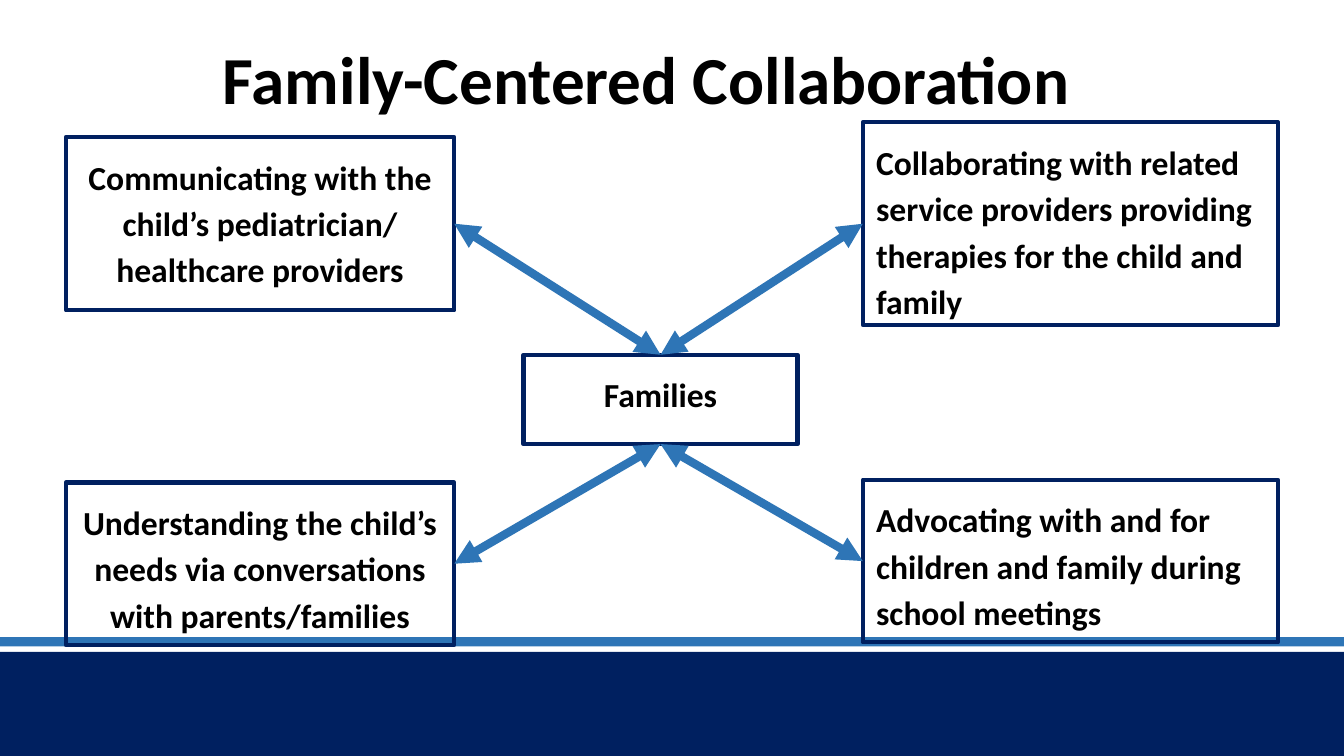
from dataclasses import dataclass

from lxml.etree import SubElement
from pptx import Presentation
from pptx.dml.color import RGBColor
from pptx.enum.shapes import MSO_CONNECTOR as Connector, MSO_SHAPE as Shape
from pptx.enum.text import MSO_ANCHOR as Anchor, PP_ALIGN as Align
from pptx.oxml.ns import qn
from pptx.util import Inches, Pt

NAVY = RGBColor(0x00, 0x20, 0x60)
BLUE = RGBColor(0x2E, 0x75, 0xB6)
BLACK = RGBColor(0, 0, 0)

WIDTH, HEIGHT = Inches(10), Inches(5.625)
FONT = "Calibri"
INSET = Inches(0.1)
TOP, LEFT, BOTTOM, RIGHT = range(4)  # connection sites of a rectangle


@dataclass(frozen=True)
class Area:
    """A rectangle in percent of the slide's width and height."""
    left: float
    top: float
    width: float
    height: float

    def lengths(self) -> tuple[int, int, int, int]:
        return (round(WIDTH * self.left / 100), round(HEIGHT * self.top / 100),
                round(WIDTH * self.width / 100), round(HEIGHT * self.height / 100))


@dataclass(frozen=True)
class Topic:
    """A box around the centre, with the sites its arrow joins."""
    area: Area
    lines: tuple[str, ...]
    align: Align
    center_site: int
    own_site: int


TITLE_AREA = Area(15.6, 1.6, 86.2, 19.4)
CENTER_AREA = Area(38.95, 46.93, 20.4, 11.82)
BANDS = ((Area(0, 86.22, 100, 13.78), NAVY), (Area(0, 84.27, 100, 1.24), BLUE))

LEFT_COLUMN = (4.9, 28.9)
RIGHT_COLUMN = (64.2, 30.9)


def topic_area(column: tuple[float, float], top: float, height: float) -> Area:
    left, width = column
    return Area(left, top, width, height)


TOPICS = (
    Topic(topic_area(LEFT_COLUMN, 18.13, 22.93),
          ("Communicating with the child’s pediatrician/", "healthcare providers"),
          Align.CENTER, TOP, RIGHT),
    Topic(topic_area(RIGHT_COLUMN, 16.18, 26.84),
          ("Collaborating with related service providers providing "
           "therapies for the child and family",),
          Align.LEFT, TOP, LEFT),
    Topic(topic_area(LEFT_COLUMN, 63.82, 21.51),
          ("Understanding the child’s needs via conversations with parents/families",),
          Align.CENTER, BOTTOM, RIGHT),
    Topic(topic_area(RIGHT_COLUMN, 63.47, 21.51),
          ("Advocating with and for children and family during school meetings",),
          Align.LEFT, BOTTOM, LEFT),
)


def write_text(shape, lines: tuple[str, ...], size: int, align: Align) -> None:
    frame = shape.text_frame
    frame.word_wrap = True
    frame.vertical_anchor = Anchor.TOP
    frame.margin_left = frame.margin_right = INSET
    frame.margin_top = frame.margin_bottom = INSET
    paragraph = frame.paragraphs[0]
    paragraph.alignment = align
    paragraph.line_spacing = 1.15
    for index, line in enumerate(lines):
        if index:
            paragraph.add_line_break()
        run = paragraph.add_run()
        run.text = line
        run.font.name = FONT
        run.font.size = Pt(size)
        run.font.bold = True
        run.font.color.rgb = BLACK


def add_band(slide, area: Area, color: RGBColor) -> None:
    band = slide.shapes.add_shape(Shape.RECTANGLE, *area.lengths())
    band.shadow.inherit = False
    band.fill.solid()
    band.fill.fore_color.rgb = color
    band.line.fill.background()


def add_box(slide, area: Area, lines: tuple[str, ...], align: Align):
    box = slide.shapes.add_shape(Shape.RECTANGLE, *area.lengths())
    box.shadow.inherit = False
    box.fill.background()
    box.line.color.rgb = NAVY
    box.line.width = Pt(2.25)
    write_text(box, lines, 18, align)
    return box


def add_double_arrow(slide, start, start_site: int, end, end_site: int) -> None:
    arrow = slide.shapes.add_connector(Connector.STRAIGHT, 0, 0, 0, 0)
    arrow.begin_connect(start, start_site)
    arrow.end_connect(end, end_site)
    arrow.line.color.rgb = BLUE
    arrow.line.width = Pt(4.5)
    outline = arrow.line._get_or_add_ln()
    for tag in ("a:headEnd", "a:tailEnd"):
        SubElement(outline, qn(tag), type="triangle")
    SubElement(arrow._element.spPr, qn("a:effectLst"))


def main() -> None:
    presentation = Presentation()
    presentation.slide_width, presentation.slide_height = WIDTH, HEIGHT
    slide = presentation.slides.add_slide(presentation.slide_layouts[6])

    for area, color in BANDS:
        add_band(slide, area, color)
    title = slide.shapes.add_textbox(*TITLE_AREA.lengths())
    write_text(title, ("Family-Centered Collaboration",), 36, Align.LEFT)

    center = add_box(slide, CENTER_AREA, ("Families",), Align.CENTER)
    boxes = [add_box(slide, topic.area, topic.lines, topic.align) for topic in TOPICS]
    for topic, box in zip(TOPICS, boxes):
        add_double_arrow(slide, center, topic.center_site, box, topic.own_site)

    presentation.save("out.pptx")


if __name__ == "__main__":
    main()
